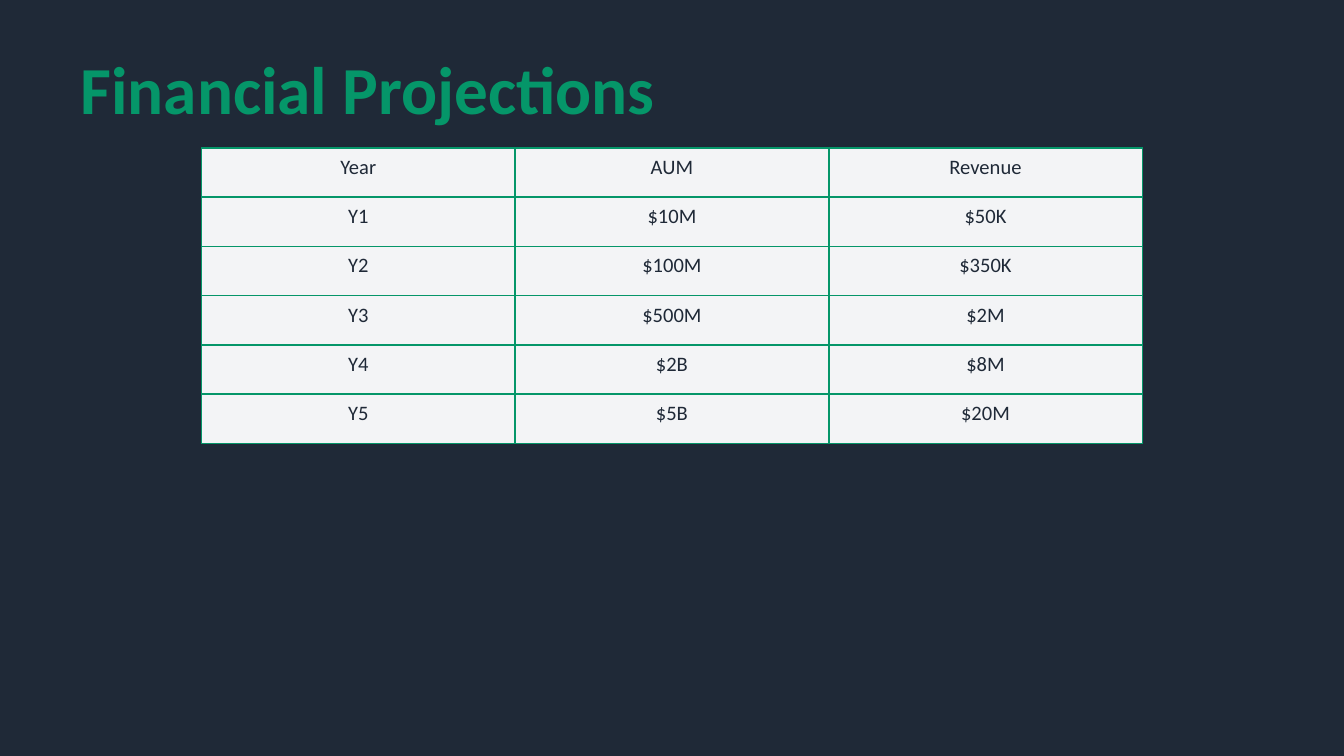
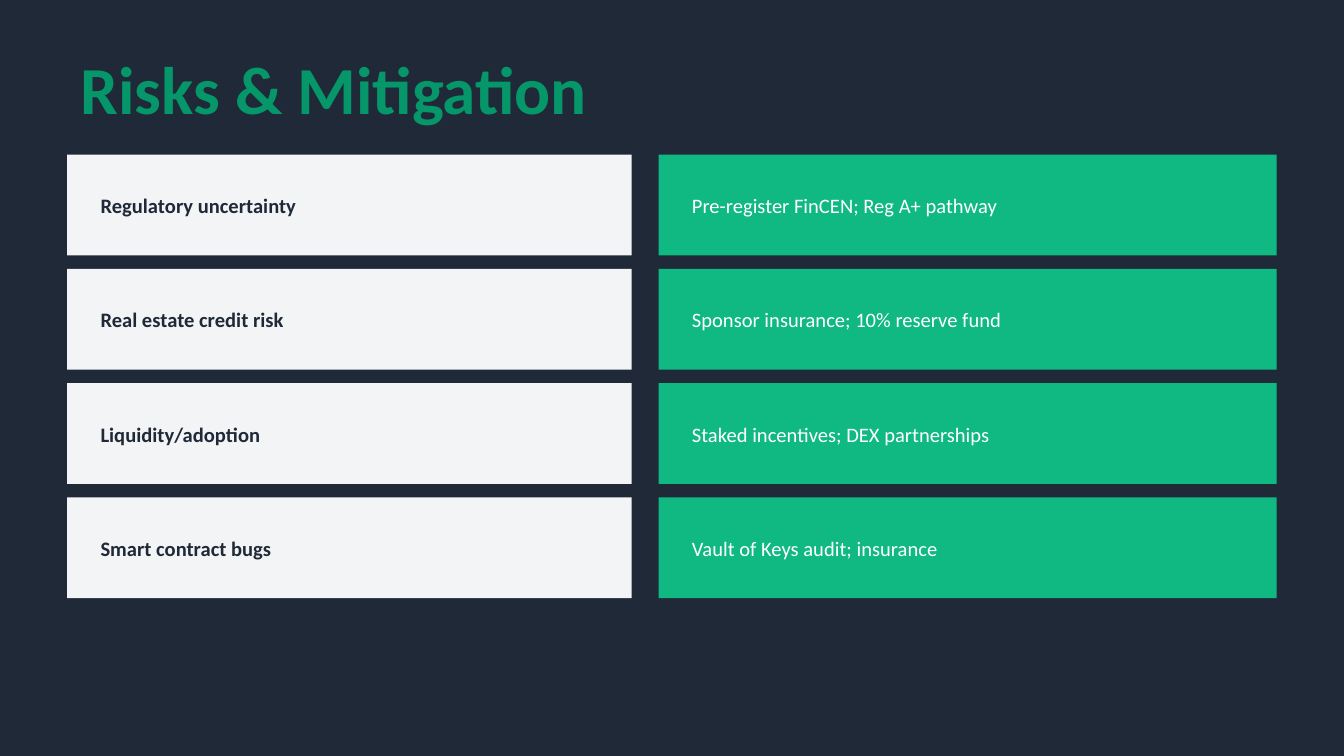
"""Build two pitch slides: a projections table and a grid of risks with their mitigations."""
from lxml import etree
from pptx import Presentation
from pptx import util as u
from pptx.dml.color import RGBColor
from pptx.enum import shapes, text
from pptx.oxml import ns

PX = 4572
FONT = "Calibri"
HUE = {"dark": "1F2937", "title": "059669", "pale": "F3F4F6",
       "green": "10B981", "white": "FFFFFF"}


def px(*nums):
    return [u.Emu(n * PX) for n in nums]


def write(frame, words, size, hue, bold=False, align=None):
    para = frame.paragraphs[0]
    para.alignment = align
    run = para.add_run()
    run.text = words
    run.font.name = FONT
    run.font.size = u.Pt(size)
    run.font.bold = bold
    run.font.color.rgb = RGBColor.from_string(HUE[hue])


deck = Presentation()
deck.slide_width, deck.slide_height = px(2000, 1125)
back = deck.slide_master.background.fill
back.solid()
back.fore_color.rgb = RGBColor.from_string(HUE["dark"])

pages = []
for name in ("Financial Projections", "Risks & Mitigation"):
    page = deck.slides.add_slide(deck.slide_layouts[5])
    title = page.shapes.title
    title.left, title.top, title.width, title.height = px(100, 80, 1800, 100)
    frame = title.text_frame
    frame.auto_size = text.MSO_AUTO_SIZE.NONE
    frame.vertical_anchor = text.MSO_ANCHOR.MIDDLE
    write(frame, name, 36, "title", True, text.PP_ALIGN.LEFT)
    pages.append(page)
money, risk = pages

rows = [
    ("Year", "AUM", "Revenue"),
    ("Y1", "$10M", "$50K"),
    ("Y2", "$100M", "$350K"),
    ("Y3", "$500M", "$2M"),
    ("Y4", "$2B", "$8M"),
    ("Y5", "$5B", "$20M"),
]
grid = money.shapes.add_table(len(rows), 3, *px(300, 220, 1400, 440)).table
grid.first_row = grid.horz_banding = False
for r, row in enumerate(rows):
    for c, words in enumerate(row):
        cell = grid.cell(r, c)
        cell.fill.solid()
        cell.fill.fore_color.rgb = RGBColor.from_string(HUE["pale"])
        write(cell.text_frame, words, 11, "dark", align=text.PP_ALIGN.CENTER)
        props = cell._tc.get_or_add_tcPr()
        for i, side in enumerate(("lnL", "lnR", "lnT", "lnB")):
            line = etree.Element(ns.qn("a:" + side), w=str(u.Pt(1)))
            fill = etree.SubElement(line, ns.qn("a:solidFill"))
            etree.SubElement(fill, ns.qn("a:srgbClr"), val=HUE["title"])
            props.insert(i, line)

pairs = [
    ("Regulatory uncertainty", "Pre-register FinCEN; Reg A+ pathway"),
    ("Real estate credit risk", "Sponsor insurance; 10% reserve fund"),
    ("Liquidity/adoption", "Staked incentives; DEX partnerships"),
    ("Smart contract bugs", "Vault of Keys audit; insurance"),
]
cols = [(100, 840, "pale", "dark", True), (980, 920, "green", "white", False)]
for r, pair in enumerate(pairs):
    top = 230 + 170 * r
    for words, (left, wide, fill, ink, bold) in zip(pair, cols):
        card = risk.shapes.add_shape(shapes.MSO_SHAPE.RECTANGLE,
                                     *px(left, top, wide, 150))
        card.shadow.inherit = False
        card.fill.solid()
        card.fill.fore_color.rgb = RGBColor.from_string(HUE[fill])
        card.line.fill.background()
        box = risk.shapes.add_textbox(*px(left + 30, top + 36, wide - 60, 80))
        frame = box.text_frame
        frame.word_wrap = True
        frame.vertical_anchor = text.MSO_ANCHOR.MIDDLE
        write(frame, words, 11, ink, bold)

deck.save("out.pptx")
